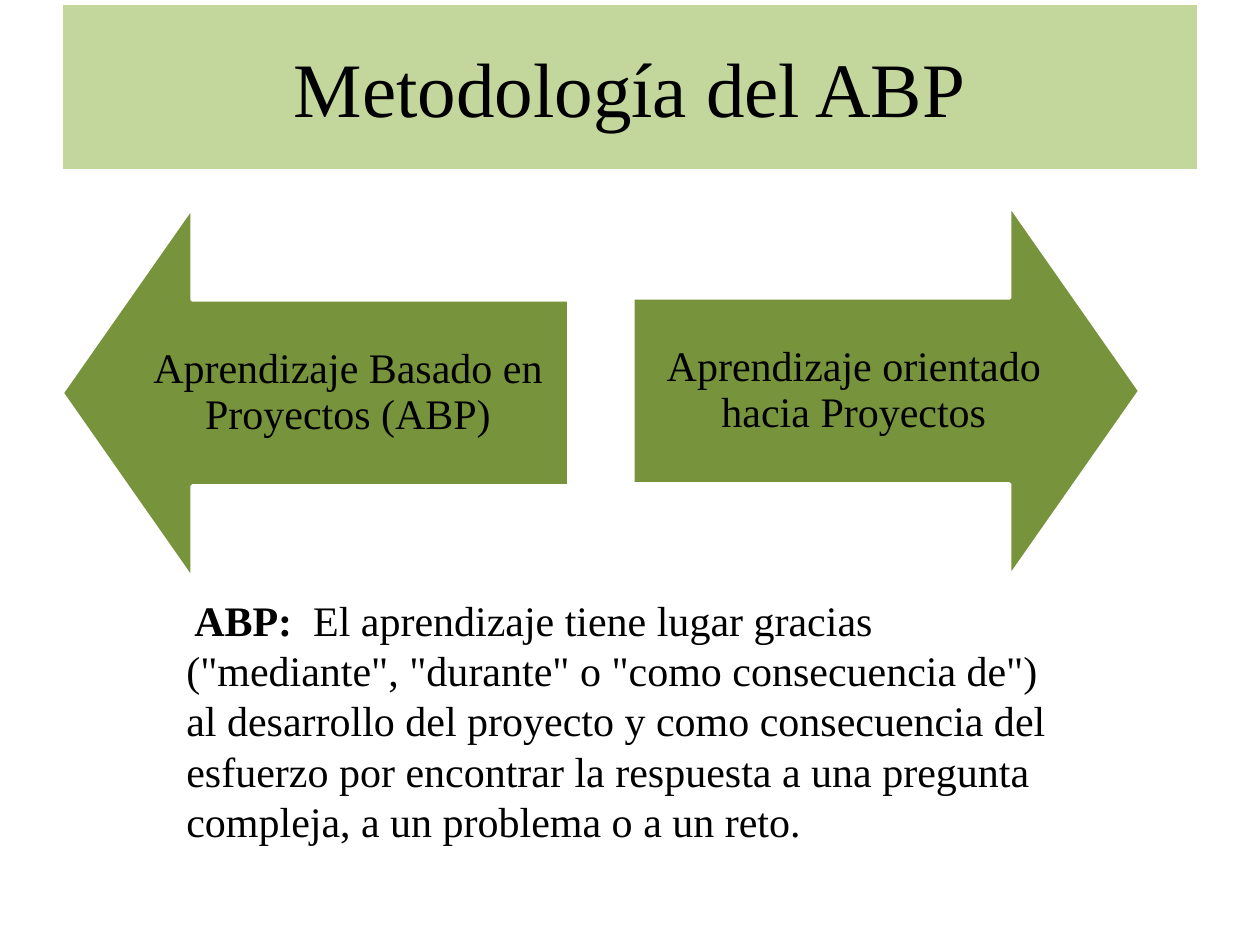
from pptx import Presentation
from pptx.dml.color import RGBColor
from pptx.enum.shapes import MSO_SHAPE
from pptx.enum.text import MSO_ANCHOR, PP_ALIGN
from pptx.util import Emu, Pt

PX = 914400 // 126
FONT = "Times New Roman"
COLORS = {"banner": "C3D69B", "arrow": "77933C", "outline": "FFFFFF", "text": "000000"}

TITLE = "Metodología del ABP"
ARROWS = [
    # direction, left, top, label
    (MSO_SHAPE.LEFT_ARROW, 62, 207, "Aprendizaje Basado en Proyectos (ABP)"),
    (MSO_SHAPE.RIGHT_ARROW, 633, 205, "Aprendizaje orientado hacia Proyectos"),
]
ARROW_SIZE = (507, 372)
DEFINITION = [
    # text, size, bold
    (" ", 18, False),
    ("ABP: ", 24, True),
    (" El aprendizaje tiene lugar gracias (\"mediante\", \"durante\" o \"como consecuencia de\") "
     "al desarrollo del proyecto y como consecuencia del esfuerzo por encontrar la respuesta "
     "a una pregunta compleja, a un problema o a un reto.", 24, False),
]


def px(*lengths):
    return [Emu(length * PX) for length in lengths]


def color(name):
    return RGBColor.from_string(COLORS[name])


def paint(shape, name):
    shape.fill.solid()
    shape.fill.fore_color.rgb = color(name)


def add_run(paragraph, text, size, bold=False):
    run = paragraph.add_run()
    run.text = text
    run.font.name = FONT
    run.font.size = Pt(size)
    run.font.bold = bold
    run.font.color.rgb = color("text")


def add_title(slide):
    title = slide.shapes.title
    title.left, title.top, title.width, title.height = px(63, 5, 1134, 164)
    paint(title, "banner")
    title.text_frame.vertical_anchor = MSO_ANCHOR.MIDDLE
    heading = title.text_frame.paragraphs[0]
    heading.alignment = PP_ALIGN.CENTER
    add_run(heading, TITLE, 44)


def add_arrow(slide, direction, left, top, label):
    arrow = slide.shapes.add_shape(direction, *px(left, top, *ARROW_SIZE))
    arrow.adjustments[0] = 0.5
    arrow.adjustments[1] = 0.35
    arrow.shadow.inherit = False
    paint(arrow, "arrow")
    arrow.line.color.rgb = color("outline")
    arrow.line.width = Pt(2)
    frame = arrow.text_frame
    frame.word_wrap = True
    frame.vertical_anchor = MSO_ANCHOR.MIDDLE
    frame.margin_left, frame.margin_top, frame.margin_right, frame.margin_bottom = px(*[24] * 4)
    caption = frame.paragraphs[0]
    caption.alignment = PP_ALIGN.CENTER
    caption.line_spacing = 0.9
    add_run(caption, label, 24)


def add_definition(slide):
    frame = slide.shapes.add_textbox(*px(174, 588, 912, 267)).text_frame
    frame.word_wrap = True
    for text, size, bold in DEFINITION:
        add_run(frame.paragraphs[0], text, size, bold)


def main():
    deck = Presentation()
    deck.slide_width, deck.slide_height = px(1260, 945)
    slide = deck.slides.add_slide(deck.slide_layouts.get_by_name("Title Only"))
    add_title(slide)
    for arrow in ARROWS:
        add_arrow(slide, *arrow)
    add_definition(slide)
    deck.save("out.pptx")


if __name__ == "__main__":
    main()
